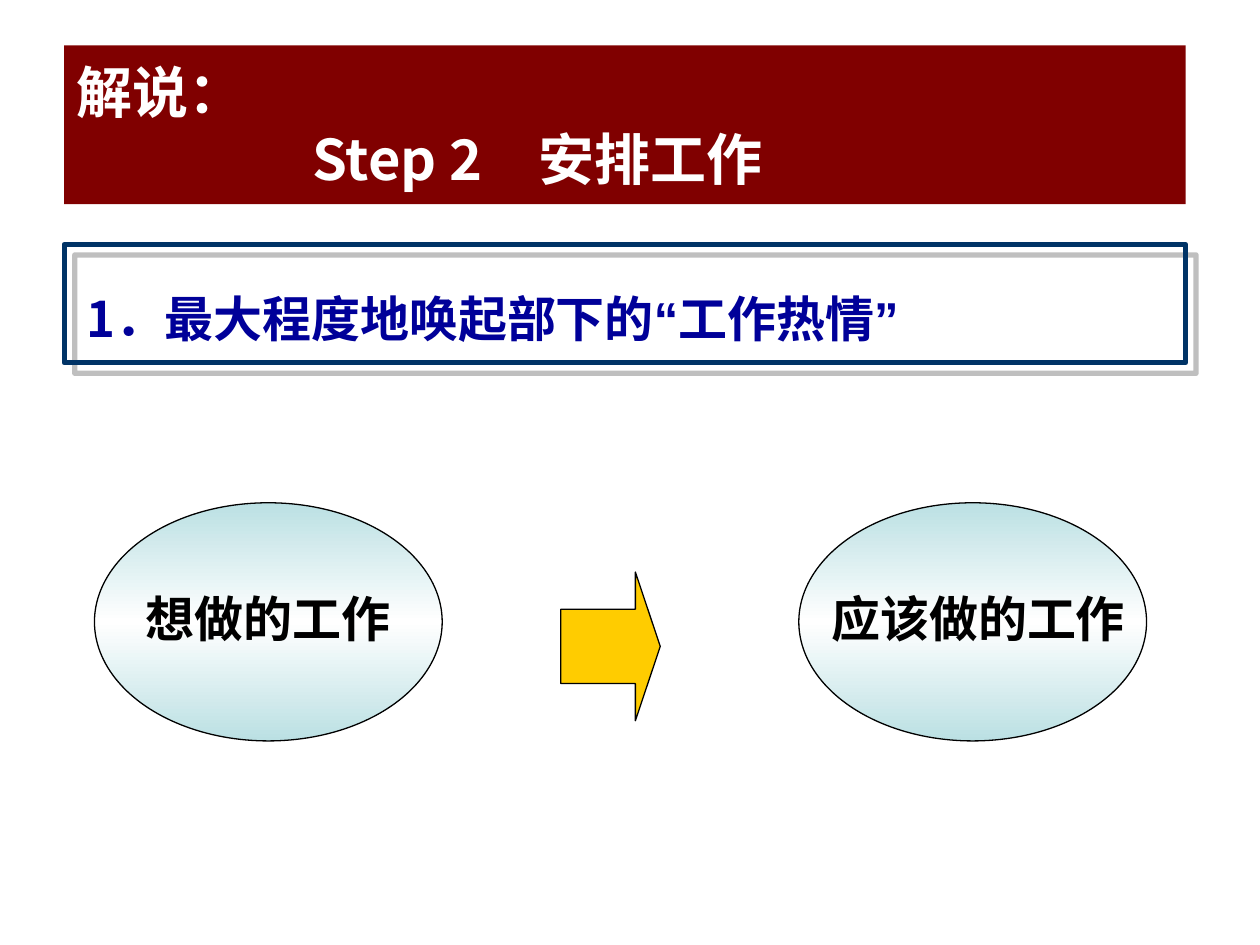
from copy import deepcopy
from dataclasses import dataclass

from lxml import etree
from pptx import Presentation
from pptx.dml.color import RGBColor
from pptx.enum.shapes import MSO_SHAPE
from pptx.enum.text import MSO_ANCHOR, MSO_AUTO_SIZE, PP_ALIGN
from pptx.oxml.ns import qn
from pptx.util import Inches, Pt

RECTANGLE, OVAL, RIGHT_ARROW = MSO_SHAPE.RECTANGLE, MSO_SHAPE.OVAL, MSO_SHAPE.RIGHT_ARROW
MIDDLE, LEFT, FIXED = MSO_ANCHOR.MIDDLE, PP_ALIGN.LEFT, MSO_AUTO_SIZE.NONE
TITLE_ONLY = 5


@dataclass(frozen=True)
class Theme:
    banner: str = "800000"
    banner_text: str = "FFFFFF"
    frame: str = "003366"
    shadow: str = "808080"
    heading: str = "000099"
    ink: str = "000000"
    oval_edge: str = "BBE0E3"
    oval_middle: str = "FFFFFF"
    arrow: str = "FFCC00"
    chinese: str = "Noto Sans CJK SC"
    latin: str = "Arial"
    title_size: int = 32
    body_size: int = 28
    thin: float = 0.75
    thick: float = 3


THEME = Theme()


def color(value):
    return RGBColor.from_string(value)


def place(shape, box):
    shape.left, shape.top, shape.width, shape.height = map(Inches, box)


def format_run(run, size, text_color, font_name):
    run.font.size = Pt(size)
    run.font.bold = True
    run.font.color.rgb = color(text_color)
    run.font.name = font_name
    east_asian = etree.Element(qn("a:ea"), typeface=font_name)
    run.font._element.find(qn("a:latin")).addnext(east_asian)


def add_outlined(slide, preset, box, line_color, line_width):
    shape = slide.shapes.add_shape(preset, *map(Inches, box))
    shape.shadow.inherit = False
    shape.line.color.rgb = color(line_color)
    shape.line.width = Pt(line_width)
    return shape


def add_label(slide, box, parts, text_color):
    """Add one line of text made of (text, font name) parts."""
    label = slide.shapes.add_textbox(*map(Inches, box))
    label.text_frame.word_wrap = True
    label.text_frame.vertical_anchor = MIDDLE
    for text, font_name in parts:
        run = label.text_frame.paragraphs[0].add_run()
        run.text = text
        format_run(run, THEME.body_size, text_color, font_name)


def add_banner(slide, box):
    title = slide.shapes.title
    place(title, box)
    title.fill.solid()
    title.fill.fore_color.rgb = color(THEME.banner)
    frame = title.text_frame
    frame.text = "解说：\nStep 2　安排工作"
    frame.auto_size = FIXED
    frame.vertical_anchor = MIDDLE
    for paragraph, indent in zip(frame.paragraphs, (0, 1.87)):
        paragraph.alignment = LEFT
        paragraph._p.get_or_add_pPr().set("marL", str(Inches(indent)))
        format_run(paragraph.runs[0], THEME.title_size, THEME.banner_text, THEME.chinese)


def add_heading(slide, box):
    left, top, width, _ = box
    frame = add_outlined(slide, RECTANGLE, box, THEME.frame, THEME.thick)
    frame.fill.background()
    # Offset shadow of the frame
    effects = frame._element.spPr.find(qn("a:effectLst"))
    shadow = etree.SubElement(effects, qn("a:outerShdw"), dist=str(Pt(8.5)),
                              dir="2700000", algn="ctr", rotWithShape="0")
    shadow_color = etree.SubElement(shadow, qn("a:srgbClr"), val=THEME.shadow)
    etree.SubElement(shadow_color, qn("a:alpha"), val="50000")
    add_label(slide, (left + 0.08, top + 0.3, width + 0.51, 0.57),
              [("1．最大程度地唤起部下的", THEME.chinese), ("“", THEME.latin),
               ("工作热情", THEME.chinese), ("”", THEME.latin)], THEME.heading)


def add_work_oval(slide, box, text, label_inset):
    left, top, _, _ = box
    oval = add_outlined(slide, OVAL, box, THEME.ink, THEME.thin)
    # Gradient from edge colour to middle colour and back
    oval.fill.gradient()
    oval.fill.gradient_angle = 90
    stop_list = oval._element.spPr.find(qn("a:gradFill")).find(qn("a:gsLst"))
    stop_list.insert(1, deepcopy(stop_list[0]))
    shades = (THEME.oval_edge, THEME.oval_middle, THEME.oval_edge)
    for stop, position, shade in zip(oval.fill.gradient_stops, (0, 0.5, 1), shades):
        stop.position = position
        stop.color.rgb = color(shade)
    add_label(slide, (left + label_inset, top + 0.63, 2.6, 0.57),
              [(text, THEME.latin)], THEME.ink)


def add_arrow(slide, box):
    arrow = add_outlined(slide, RIGHT_ARROW, box, THEME.ink, THEME.thin)
    arrow.fill.solid()
    arrow.fill.fore_color.rgb = color(THEME.arrow)
    arrow.adjustments[0] = 0.5
    arrow.adjustments[1] = 0.25


def main():
    presentation = Presentation()
    presentation.slide_width, presentation.slide_height = Inches(10), Inches(7.5)
    slide = presentation.slides.add_slide(presentation.slide_layouts[TITLE_ONLY])
    add_banner(slide, (0.51, 0.36, 8.9, 1.26))
    add_heading(slide, (0.51, 1.94, 8.9, 0.94))
    # From wanted work to required work
    add_work_oval(slide, (0.75, 3.99, 2.76, 1.89), "想做的工作", 0.31)
    add_arrow(slide, (4.45, 4.54, 0.79, 1.18))
    add_work_oval(slide, (6.34, 3.99, 2.76, 1.89), "应该做的工作", 0.16)
    presentation.save("out.pptx")


if __name__ == "__main__":
    main()
